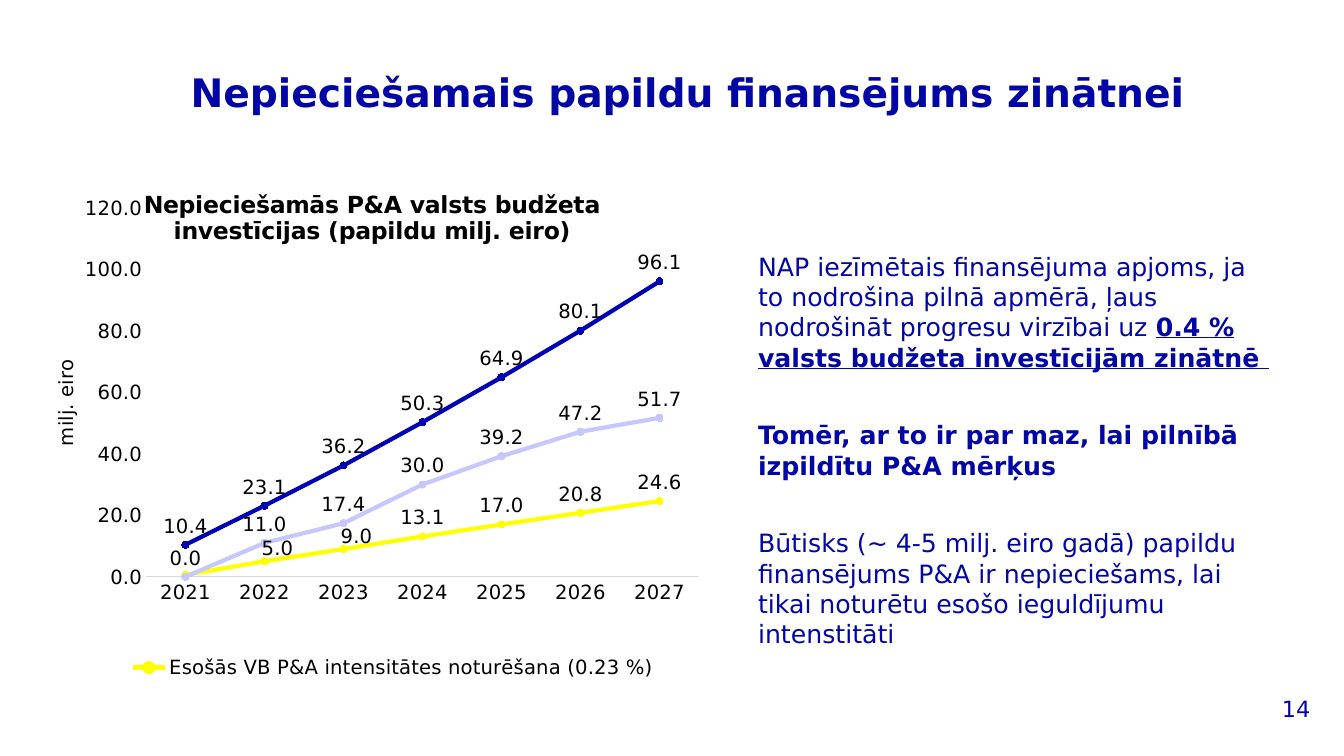
from dataclasses import dataclass

from lxml.etree import SubElement
from pptx import Presentation
from pptx.chart.data import CategoryChartData
from pptx.dml.color import RGBColor
from pptx.enum.chart import (XL_CHART_TYPE, XL_LABEL_POSITION, XL_LEGEND_POSITION,
                             XL_MARKER_STYLE, XL_TICK_MARK)
from pptx.enum.text import MSO_ANCHOR, PP_ALIGN
from pptx.oxml.ns import qn
from pptx.util import Cm, Pt


@dataclass(frozen=True)
class Theme:
    face: str = "DejaVu Sans"
    navy: RGBColor = RGBColor(0x02, 0x06, 0xA4)
    black: RGBColor = RGBColor(0, 0, 0)
    axis: RGBColor = RGBColor(0xD9, 0xD9, 0xD9)
    yellow: RGBColor = RGBColor(0xFF, 0xFF, 0)
    lilac: RGBColor = RGBColor(0xC6, 0xC7, 0xFE)
    blue: RGBColor = RGBColor(0, 0x01, 0xB4)
    heading: Pt = Pt(28)
    body: Pt = Pt(18)
    number: Pt = Pt(16)
    chart_title: Pt = Pt(16.8)
    chart: Pt = Pt(14)


theme = Theme()


def style(font, size, color, bold=False):
    font.name, font.size, font.bold = theme.face, size, bold
    font.color.rgb = color


def place(element, index, **fractions):
    """Give a chart part a manual layout, in fractions of the chart."""
    for old in element.findall(qn("c:layout")):
        element.remove(old)
    layout = element.makeelement(qn("c:layout"))
    element.insert(index, layout)
    manual = SubElement(layout, qn("c:manualLayout"))
    for tag, value in fractions.items():
        SubElement(manual, qn(f"c:{tag}")).set("val", str(value))


prs = Presentation()
prs.slide_width, prs.slide_height = Cm(33.87), Cm(19.05)
slide = prs.slides.add_slide(prs.slide_layouts[1])
heading, conclusions = slide.placeholders

# Heading
heading.left, heading.top, heading.width, heading.height = Cm(4.55), Cm(1.6), Cm(27.1), Cm(1.45)
heading.text_frame.text = "Nepieciešamais papildu finansējums zinātnei"
heading_line = heading.text_frame.paragraphs[0]
heading_line.alignment = PP_ALIGN.LEFT
style(heading_line.font, theme.heading, theme.navy, True)

# Chart data: only the lowest line is named
funding = CategoryChartData(number_format="0.0")
funding.categories = [str(year) for year in range(2021, 2028)]
scenarios = [
    ("Esošās VB P&A intensitātes noturēšana (0.23 %)", theme.yellow,
     (0.6, 5.0, 9.0, 13.1, 17.0, 20.8, 24.6)),
    ("", theme.lilac, (0.0, 11.0, 17.4, 30.0, 39.2, 47.2, 51.7)),
    ("", theme.blue, (10.4, 23.1, 36.2, 50.3, 64.9, 80.1, 96.1)),
]
for scenario, _, amounts in scenarios:
    funding.add_series(scenario, amounts)
chart = slide.shapes.add_chart(XL_CHART_TYPE.LINE_MARKERS, Cm(1.22), Cm(4.24),
                               Cm(16.41), Cm(14.3), funding).chart
style(chart.font, theme.chart, theme.black)

# Chart title
chart.has_title = True
chart_title = chart.chart_title.text_frame
chart_title.text = "Nepieciešamās P&A valsts budžeta investīcijas (papildu milj. eiro)"
style(chart_title.paragraphs[0].font, theme.chart_title, theme.black, True)

# Axes
years, amounts_axis = chart.category_axis, chart.value_axis
for axis in (years, amounts_axis):
    axis.has_major_gridlines = False
    axis.major_tick_mark = axis.minor_tick_mark = XL_TICK_MARK.NONE
    style(axis.tick_labels.font, theme.chart, theme.black)
years.format.line.color.rgb = theme.axis
years.format.line.width = Pt(0.75)
amounts_axis.format.line.fill.background()
amounts_axis.minimum_scale, amounts_axis.maximum_scale, amounts_axis.major_unit = 0, 120, 20
amounts_axis.tick_labels.number_format = "0.0"
amounts_axis.tick_labels.number_format_is_linked = False
unit = amounts_axis.axis_title.text_frame
unit.text = "milj. eiro"
style(unit.paragraphs[0].font, theme.chart, theme.black)

# Lines, markers and value labels
chart.plots[0].vary_by_categories = False
for line, (_, color, _) in zip(chart.plots[0].series, scenarios):
    line.smooth = False
    line.format.line.color.rgb = color
    line.format.line.width = Pt(3)
    line.marker.style, line.marker.size = XL_MARKER_STYLE.CIRCLE, 5
    line.marker.format.fill.solid()
    line.marker.format.fill.fore_color.rgb = color
    line.marker.format.line.color.rgb = color
    labels = line.data_labels
    labels.show_value = True
    labels.position = XL_LABEL_POSITION.ABOVE
    labels.number_format, labels.number_format_is_linked = "0.0", False
    style(labels.font, theme.chart, theme.black)

# Lowest line: first label hidden, the next two nudged clear of the line above
lowest = chart.plots[0].series[0]
for year in range(3):
    label = lowest.points[year].data_label
    style(label.font, theme.chart, theme.black)
    label.position = XL_LABEL_POSITION.ABOVE
hidden, *nudged = chart.element.iter(qn("c:dLbl"))
for setting in list(hidden)[1:]:
    hidden.remove(setting)
SubElement(hidden, qn("c:delete")).set("val", "1")
for label in nudged:
    place(label, 1, x=0.02, y=0.01)

# Legend with the lowest line only
chart.has_legend = True
chart.legend.position = XL_LEGEND_POSITION.BOTTOM
chart.legend.include_in_layout = False
style(chart.legend.font, theme.chart, theme.black)
legend = chart.element.find(".//" + qn("c:legend"))
place(legend, 1, xMode="edge", yMode="edge", x=0.11, y=0.85, w=0.84, h=0.06)
for index in (2, 1):
    entry = legend.makeelement(qn("c:legendEntry"))
    legend.insert(1, entry)
    SubElement(entry, qn("c:idx")).set("val", str(index))
    SubElement(entry, qn("c:delete")).set("val", "1")

# Places of the chart parts
main_title, unit_title = chart.element.iter(qn("c:title"))
place(main_title, 1, xMode="edge", yMode="edge", x=0.14, y=0.03)
place(unit_title, 1, xMode="edge", yMode="edge", x=0, y=0.33)
place(chart.element.find(".//" + qn("c:plotArea")), 0, layoutTarget="inner",
      xMode="edge", yMode="edge", x=0.15, y=0.07, w=0.85, h=0.65)

# Conclusions
conclusions.left, conclusions.top = Cm(18.85), Cm(6.2)
conclusions.width, conclusions.height = Cm(13.61), Cm(10.34)
statements = [
    ("NAP iezīmētais finansējuma apjoms, ja to nodrošina pilnā apmērā, "
     "ļaus nodrošināt progresu virzībai uz ", False),
    ("Tomēr, ar to ir par maz, lai pilnībā izpildītu P&A mērķus", True),
    ("Būtisks (~ 4-5 milj. eiro gadā) papildu finansējums P&A ir nepieciešams, "
     "lai tikai noturētu esošo ieguldījumu intenstitāti", False),
]
conclusions.text_frame.text = "\n".join(statement for statement, _ in statements)
for paragraph, (_, bold) in zip(conclusions.text_frame.paragraphs, statements):
    properties = paragraph._p.get_or_add_pPr()
    properties.set("marL", "0")
    properties.set("indent", "0")
    SubElement(properties, qn("a:buNone"))
    paragraph.line_spacing = 1.0
    paragraph.space_before, paragraph.space_after = Pt(0), Pt(34)
    style(paragraph.font, theme.body, theme.navy, bold)
target = conclusions.text_frame.paragraphs[0].add_run()
target.text = "0.4 % valsts budžeta investīcijām zinātnē "
target.font.bold = target.font.underline = True

# Slide number
number = slide.shapes.add_textbox(Cm(25.65), Cm(17.35), Cm(7.62), Cm(1.02)).text_frame
number.word_wrap = True
number.vertical_anchor = MSO_ANCHOR.MIDDLE
number.text = "14"
number.paragraphs[0].alignment = PP_ALIGN.RIGHT
style(number.paragraphs[0].font, theme.number, theme.navy)

prs.save("out.pptx")
